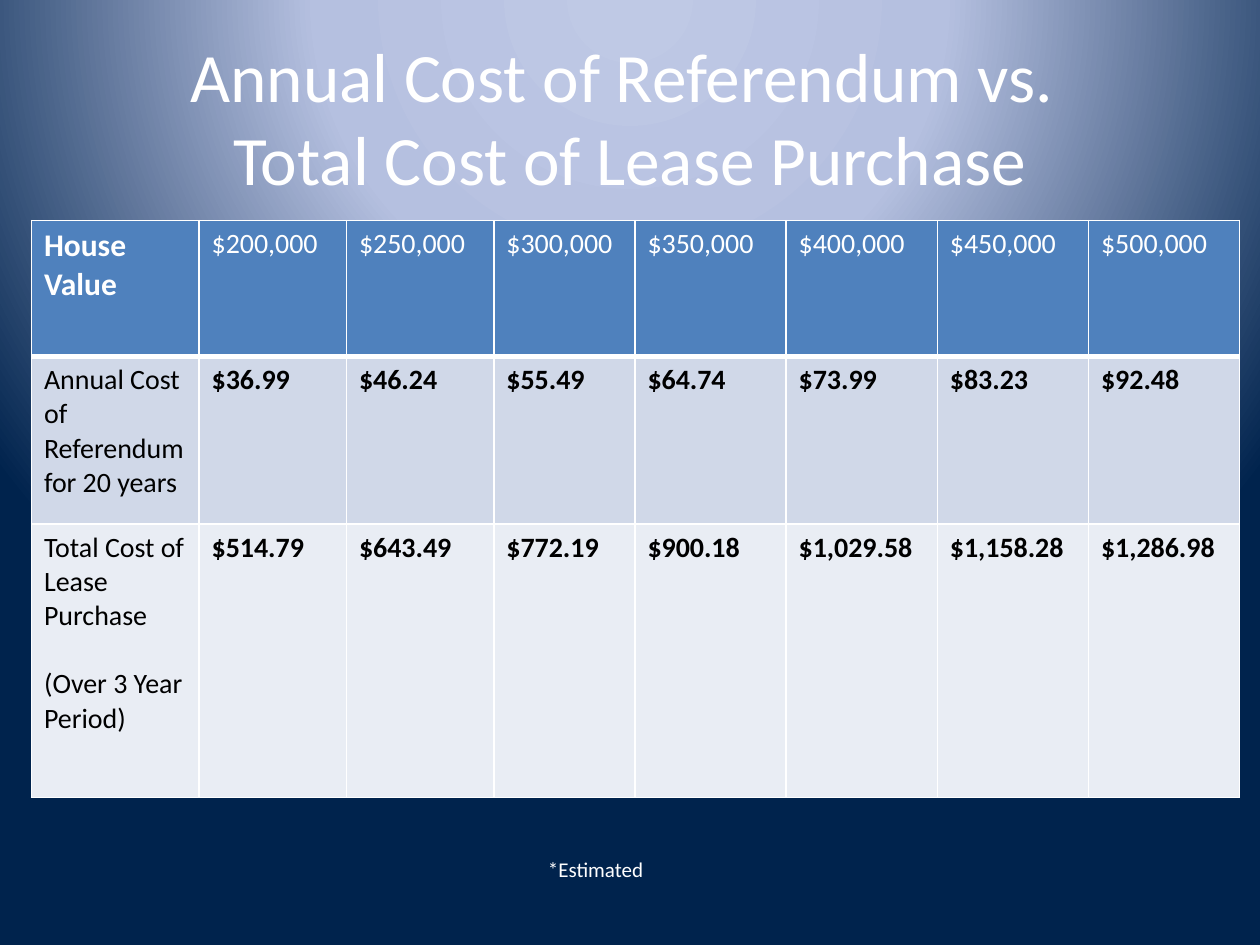
import dataclasses

import pptx
import pptx.dml.color
import pptx.enum.text
import pptx.oxml
import pptx.oxml.ns
import pptx.util
from pptx.util import Inches


@dataclasses.dataclass(frozen=True)
class Theme:
    font: str = "Calibri"
    white: str = "FFFFFF"
    black: str = "000000"
    head: str = "4F81BD"
    bands: tuple = ("D0D8E8", "E9EDF4")
    glow: tuple = ((0, "BFC9E5"), (40, "B5C0E0"), (100, "00234D"))
    title: float = 39.6
    label: float = 18
    body: float = 16
    note: float = 12
    gap: float = 19.5
    thin: float = 1
    thick: float = 3


THEME = Theme()
NS = pptx.oxml.ns.nsdecls("a")
WIDTHS = [1.33, 1.17, 1.17, 1.12] + [1.2] * 4
HEIGHTS = [1.08, 1.33, 2.17]
ROWS = [
    ["House Value", "$200,000", "$250,000", "$300,000",
     "$350,000", "$400,000", "$450,000", "$500,000"],
    ["Annual Cost of Referendum for 20 years", "$36.99", "$46.24", "$55.49",
     "$64.74", "$73.99", "$83.23", "$92.48"],
    ["Total Cost of Lease Purchase\n(Over 3 Year Period)", "$514.79", "$643.49",
     "$772.19", "$900.18", "$1,029.58", "$1,158.28", "$1,286.98"],
]


def put(item, values):
    for name, value in values.items():
        setattr(item, name, value)


def write(frame, text, size, color, bold=False, align=None):
    frame.text = text
    for index, para in enumerate(frame.paragraphs):
        put(para, {"alignment": align,
                   "space_before": pptx.util.Pt(THEME.gap if index else 0)})
        for run in para.runs:
            put(run.font, {"name": THEME.font, "size": pptx.util.Pt(size), "bold": bold})
            run.font.color.rgb = pptx.dml.color.RGBColor.from_string(color)


def paint(slide):
    fill = slide.background.fill
    fill.gradient()
    stops = "".join(
        f'<a:gs pos="{pos * 1000}"><a:srgbClr val="{color}"/></a:gs>'
        for pos, color in THEME.glow)
    grad = pptx.oxml.parse_xml(
        f'<a:gradFill {NS} rotWithShape="1"><a:gsLst>{stops}</a:gsLst>'
        '<a:path path="circle"><a:fillToRect l="50000" t="-80000" r="50000" b="180000"/>'
        '</a:path></a:gradFill>')
    old = slide.element.find(".//" + pptx.oxml.ns.qn("a:gradFill"))
    old.getparent().replace(old, grad)


def add_text(slide, box, text, size, anchor, align=None):
    frame = slide.shapes.add_textbox(*map(Inches, box)).text_frame
    put(frame, {"word_wrap": True, "vertical_anchor": anchor})
    write(frame, text, size, THEME.white, align=align)


def edge(cell, sides):
    props = cell._tc.get_or_add_tcPr()
    for side, width in sides.items():
        props.append(pptx.oxml.parse_xml(
            f'<a:ln{side} {NS} w="{pptx.util.Pt(width)}"><a:solidFill>'
            f'<a:srgbClr val="{THEME.white}"/></a:solidFill></a:ln{side}>'))


def add_grid(slide):
    box = (0.25, 1.75, sum(WIDTHS), sum(HEIGHTS))
    grid = slide.shapes.add_table(len(ROWS), len(WIDTHS), *map(Inches, box)).table
    for col, width in zip(grid.columns, WIDTHS):
        col.width = Inches(width)
    for line, height in zip(grid.rows, HEIGHTS):
        line.height = Inches(height)
    fills = (THEME.head, *THEME.bands)
    for row, texts in enumerate(ROWS):
        for col, text in enumerate(texts):
            cell = grid.cell(row, col)
            edge(cell, {"L": THEME.thin, "R": THEME.thin,
                        "T": THEME.thick if row == 1 else THEME.thin,
                        "B": THEME.thick if row == 0 else THEME.thin})
            cell.fill.solid()
            cell.fill.fore_color.rgb = pptx.dml.color.RGBColor.from_string(fills[row])
            corner = row == 0 and col == 0
            write(cell.text_frame, text,
                  THEME.label if corner else THEME.body,
                  THEME.black if row else THEME.white,
                  bold=corner or (row > 0 and col > 0))


def main():
    deck = pptx.Presentation()
    put(deck, {"slide_width": Inches(10), "slide_height": Inches(7.5)})
    slide = deck.slides.add_slide(deck.slide_layouts[6])
    paint(slide)
    anchor = pptx.enum.text.MSO_ANCHOR
    add_text(slide, (0.5, 0.3, 9, 1.25),
             "Annual Cost of Referendum vs. \vTotal Cost of Lease Purchase",
             THEME.title, anchor.MIDDLE, pptx.enum.text.PP_ALIGN.CENTER)
    add_grid(slide)
    add_text(slide, (4.25, 6.75, 1.75, 0.3), "*Estimated", THEME.note, anchor.TOP)
    deck.save("out.pptx")


if __name__ == "__main__":
    main()
